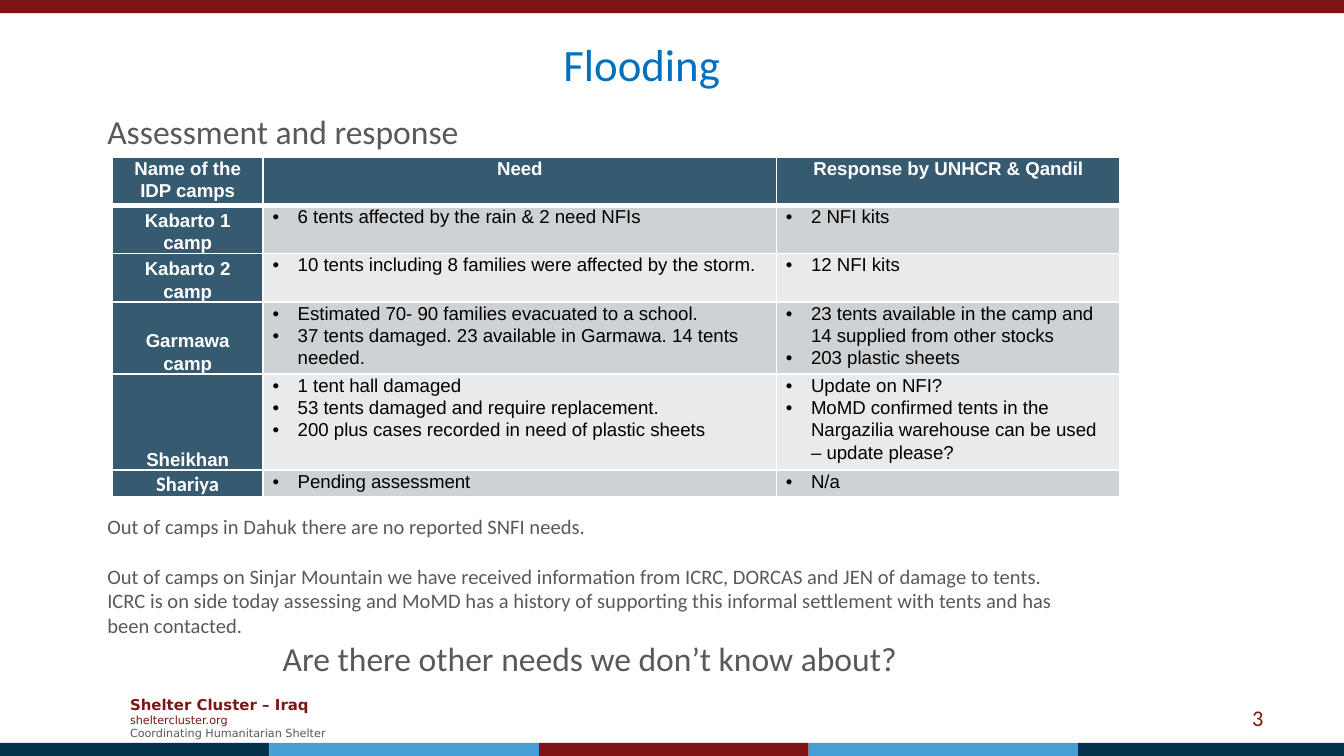
"""Build the flooding assessment and response slide."""
import pptx
import pptx.dml.color
import pptx.enum.shapes
import pptx.enum.text
import pptx.oxml.ns
import pptx.util
from lxml import etree

Pt = pptx.util.Pt
RGBColor = pptx.dml.color.RGBColor
ALIGN = pptx.enum.text.PP_ALIGN
ANCHOR = pptx.enum.text.MSO_ANCHOR
qn = pptx.oxml.ns.qn

MAROON = RGBColor(0x7F, 0x14, 0x16)
NAVY = RGBColor(0x04, 0x31, 0x4C)
SKY = RGBColor(0x45, 0x9F, 0xD5)
BLUE = RGBColor(0x00, 0x70, 0xC0)
GREY = RGBColor(0x59, 0x59, 0x59)
SLATE = RGBColor(0x36, 0x5A, 0x70)
DARK_BAND = RGBColor(0xCE, 0xD2, 0xD5)
LIGHT_BAND = RGBColor(0xE8, 0xEA, 0xEB)
WHITE = RGBColor(0xFF, 0xFF, 0xFF)
BLACK = RGBColor(0x00, 0x00, 0x00)

WIDTH, HEIGHT = 720, 405


def add_text(frame, text, font="Calibri", size=11, color=GREY, bold=False,
             align=ALIGN.LEFT, spacing=None, before=None, bullet=False):
    paragraph = frame.add_paragraph() if frame.text else frame.paragraphs[0]
    paragraph.alignment = align
    if spacing:
        paragraph.line_spacing = spacing
    if before:
        paragraph.space_before = Pt(before)
    if bullet:
        properties = paragraph._p.get_or_add_pPr()
        properties.set("marL", str(Pt(13.5)))
        properties.set("indent", str(-Pt(13.5)))
        etree.SubElement(properties, qn("a:buFont")).set("typeface", "Arial")
        etree.SubElement(properties, qn("a:buChar")).set("char", "•")
    run = paragraph.add_run()
    run.text = text
    run.font.name = font
    run.font.size = Pt(size)
    run.font.bold = bold
    run.font.color.rgb = color


class SlideBuilder:
    """Hold the table style and the slide being filled."""

    table_text = {"font": "Arial", "size": 10, "spacing": 1.07}

    def __init__(self, slide):
        self.slide = slide

    def bar(self, left, top, width, height, color):
        bar = self.slide.shapes.add_shape(
            pptx.enum.shapes.MSO_SHAPE.RECTANGLE,
            Pt(left), Pt(top), Pt(width), Pt(height))
        bar.shadow.inherit = False
        bar.fill.solid()
        bar.fill.fore_color.rgb = color
        bar.line.fill.background()

    def text_box(self, left, top, width, height, anchor=ANCHOR.TOP):
        frame = self.slide.shapes.add_textbox(
            Pt(left), Pt(top), Pt(width), Pt(height)).text_frame
        frame.word_wrap = True
        frame.vertical_anchor = anchor
        return frame

    def borders(self, cell, **widths):
        properties = cell._tc.get_or_add_tcPr()
        for side in "LRTB":
            line = etree.SubElement(properties, qn(f"a:ln{side}"))
            line.set("w", str(Pt(widths.get(side, 1))))
            fill = etree.SubElement(line, qn("a:solidFill"))
            etree.SubElement(fill, qn("a:srgbClr")).set("val", str(WHITE))

    def cell(self, cell, lines, fill, anchor=ANCHOR.TOP, edges=None, **style):
        cell.margin_left = cell.margin_right = Pt(5)
        cell.margin_top = cell.margin_bottom = 0
        cell.vertical_anchor = anchor
        self.borders(cell, **(edges or {}))
        cell.fill.solid()
        cell.fill.fore_color.rgb = fill
        for line in lines:
            add_text(cell.text_frame, line, **{**self.table_text, **style})

    def table(self, left, top, widths, heights, headings, camps):
        table = self.slide.shapes.add_table(
            len(heights), len(widths), Pt(left), Pt(top),
            Pt(sum(widths)), Pt(sum(heights))).table
        for column, width in zip(table.columns, widths):
            column.width = Pt(width)
        for row, height in zip(table.rows, heights):
            row.height = Pt(height)
        label = {"color": WHITE, "bold": True, "align": ALIGN.CENTER}
        for column, heading in enumerate(headings):
            self.cell(table.cell(0, column), [heading], SLATE,
                      edges={"B": 3}, **label)
        for row, (camp, *details, label_font) in enumerate(camps, start=1):
            edges = {"T": 3} if row == 1 else {}
            self.cell(table.cell(row, 0), [camp], SLATE, ANCHOR.BOTTOM,
                      edges, **label, **label_font)
            band = DARK_BAND if row % 2 else LIGHT_BAND
            for column, lines in enumerate(details, start=1):
                self.cell(table.cell(row, column), lines, band, edges=edges,
                          color=BLACK, bullet=True)


HEADINGS = ["Name of the IDP camps", "Need", "Response by UNHCR & Qandil"]
CAMPS = [
    ("Kabarto 1 camp", ["6 tents affected by the rain & 2 need NFIs"],
     ["2 NFI kits"], {}),
    ("Kabarto 2 camp",
     ["10 tents including 8 families were affected by the storm."],
     ["12 NFI kits"], {}),
    ("Garmawa camp",
     ["Estimated 70- 90 families evacuated to a school.",
      "37 tents damaged. 23 available in Garmawa. 14 tents needed."],
     ["23 tents available in the camp and 14 supplied from other stocks",
      "203 plastic sheets"], {}),
    ("Sheikhan",
     ["1 tent hall damaged",
      "53 tents damaged and require replacement.",
      "200 plus cases recorded in need of plastic sheets"],
     ["Update on NFI?",
      "MoMD confirmed tents in the Nargazilia warehouse can be used "
      "– update please?"], {}),
    ("Shariya", ["Pending assessment"], ["N/a"],
     {"font": "Calibri", "size": 11}),
]


def main():
    deck = pptx.Presentation()
    deck.slide_width, deck.slide_height = Pt(WIDTH), Pt(HEIGHT)
    builder = SlideBuilder(deck.slides.add_slide(deck.slide_layouts[6]))

    footer = builder.text_box(62.6, 368.6, 124.6, 31.7, ANCHOR.MIDDLE)
    add_text(footer, "Shelter Cluster – Iraq", font="DejaVu Sans", size=8,
             color=MAROON, bold=True)
    add_text(footer, "sheltercluster.org", font="DejaVu Sans", size=6,
             color=MAROON)
    add_text(footer, "Coordinating Humanitarian Shelter", font="DejaVu Sans",
             size=6)

    builder.bar(0, 0, WIDTH, 7, MAROON)
    pitch = 144.4
    for index, color in enumerate([NAVY, SKY, MAROON, SKY, NAVY]):
        left = index * pitch
        builder.bar(left, 398, min(pitch, WIDTH - left), 7, color)

    page_number = builder.text_box(516, 373.7, 168, 21.6, ANCHOR.MIDDLE)
    add_text(page_number, "3", size=12, color=MAROON, align=ALIGN.RIGHT)

    title = builder.text_box(23, 16, 641.5, 36)
    add_text(title, "Flooding", size=24, color=BLUE, align=ALIGN.CENTER)

    subtitle = builder.text_box(50.4, 56, 531.4, 29)
    add_text(subtitle, "Assessment and response", size=18)

    builder.table(60, 84.2, [81, 275, 184], [26, 25.2, 26, 38.6, 51.4, 14.5],
                  HEADINGS, CAMPS)

    notes = builder.text_box(50.4, 272, 531.4, 96)
    add_text(notes, "Out of camps in Dahuk there are no reported SNFI needs.")
    add_text(notes, "Out of camps on Sinjar Mountain we have received "
             "information from ICRC, DORCAS and JEN of damage to tents. ICRC "
             "is on side today assessing and MoMD has a history of supporting "
             "this informal settlement with tents and has been contacted.",
             before=13.2)
    add_text(notes, "Are there other needs we don’t know about?", size=18,
             align=ALIGN.CENTER)

    deck.save("out.pptx")


if __name__ == "__main__":
    main()
